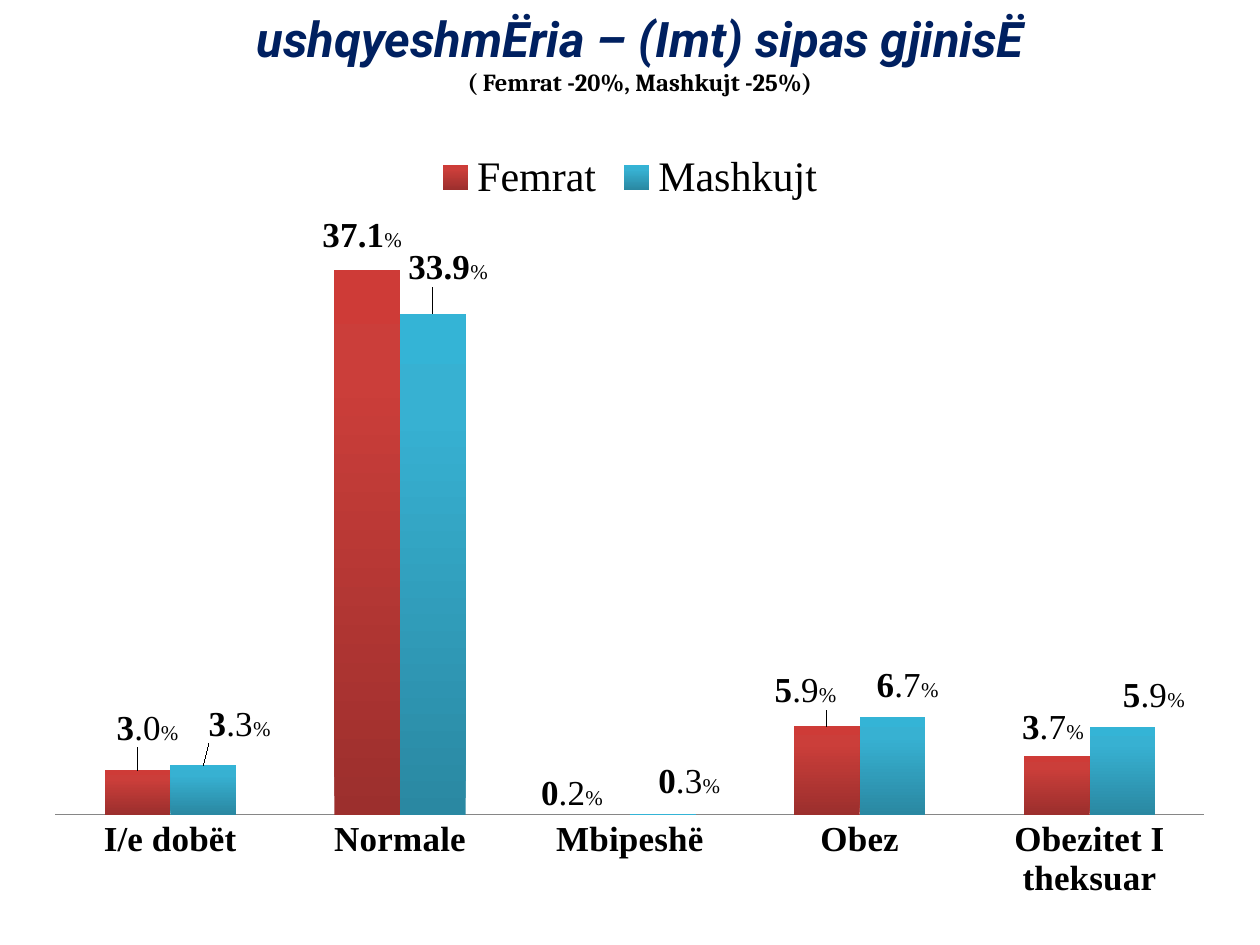
"""Builds a slide with a clustered column chart of nutrition status (BMI) by gender."""
from lxml import etree
from pptx import Presentation
from pptx import util as u
from pptx.chart import data as chart_data
from pptx.dml import color
from pptx.enum import chart as ec, text
from pptx.oxml import ns, parse_xml

TITLE = [
    ("ushqyeshmËria – (Imt) sipas gjinisË", "Roboto", 28, "002060", True),
    ("( Femrat -20%, Mashkujt -25%)", "Cambria", 14, "000000", False),
]
CATEGORIES = ["I/e dobët", "Normale", "Mbipeshë", "Obez", "Obezitet I theksuar"]
SERIES = [
    {
        "name": "Femrat",
        "values": [0.06, 0.74, 0, 0.12, 0.08],
        "format": "0%",
        "gradient": [(0, "9C2F2D"), (80, "CB3E3A"), (100, "CE3B37")],
        "labels": [("3", ".0"), ("37.1", ""), ("0", ".2"), ("5", ".9"), ("3", ".7")],
        "shifts": [(0.08, -0.14), (-0.04, -0.07), (-0.2, 0.03), (-0.17, -0.09), (-0.03, -0.03)],
    },
    {
        "name": "Mashkujt",
        "values": [0.067, 0.68, 0.001, 0.132, 0.119],
        "format": "0.00%",
        "gradient": [(0, "2A88A2"), (80, "37B1D2"), (100, "34B4D6")],
        "labels": [("3", ".3"), ("33.9", ""), ("0", ".3"), ("6", ".7"), ("5", ".9")],
        "shifts": [(0.29, -0.13), (0.12, -0.17), (0.21, -0.06), (0.12, -0.06), (0.25, -0.05)],
    },
]
CHART_WIDTH, CHART_HEIGHT = 9.5, 6.17
SERIF = "Times New Roman"


def rgb(value):
    return color.RGBColor.from_string(value)


def style(font, name, size, hue="000000", bold=False, italic=False):
    font.name, font.size, font.bold, font.italic = name, u.Pt(size), bold, italic
    font.color.rgb = rgb(hue)


def manual_layout(**settings):
    layout = etree.Element(ns.qn("c:layout"))
    manual = etree.SubElement(layout, ns.qn("c:manualLayout"))
    for tag, value in settings.items():
        etree.SubElement(manual, ns.qn("c:" + tag)).set("val", str(value))
    return layout


def fill_gradient(shape_format, stops):
    shape_format.fill.solid()
    properties = shape_format.fill._xPr
    stop_xml = "".join(
        f'<a:gs pos="{place * 1000}"><a:srgbClr val="{hue}"/></a:gs>' for place, hue in stops
    )
    gradient = parse_xml(
        f'<a:gradFill {ns.nsdecls("a")} rotWithShape="1"><a:gsLst>{stop_xml}</a:gsLst>'
        '<a:lin ang="16200000" scaled="0"/></a:gradFill>'
    )
    properties.replace(properties.find(ns.qn("a:solidFill")), gradient)


def label_point(point, label, shift):
    data_label = point.data_label
    paragraph = data_label.text_frame.paragraphs[0]
    whole, decimals = label
    for part, size, bold in [(whole, 20, True), (decimals, 20, False), ("%", 12, False)]:
        if part:
            run = paragraph.add_run()
            run.text = part
            style(run.font, SERIF, size, bold=bold)
    data_label.position = ec.XL_LABEL_POSITION.OUTSIDE_END
    dx, dy = shift
    element = data_label._dLbl
    for old in element.findall(ns.qn("c:layout")):
        element.remove(old)
    element.insert(1, manual_layout(x=dx / CHART_WIDTH, y=dy / CHART_HEIGHT))


def add_title(slide):
    title = slide.shapes.title
    title.left, title.top = u.Inches(0.58), u.Inches(0)
    title.width, title.height = u.Inches(9), u.Inches(0.83)
    frame = title.text_frame
    frame.text = "\v".join(line[0] for line in TITLE)
    frame.vertical_anchor = text.MSO_ANCHOR.MIDDLE
    frame.auto_size = text.MSO_AUTO_SIZE.NONE
    paragraph = frame.paragraphs[0]
    paragraph.alignment = text.PP_ALIGN.CENTER
    for run, (_, name, size, hue, italic) in zip(paragraph.runs, TITLE):
        style(run.font, name, size, hue, True, italic)


def add_columns(slide):
    figures = chart_data.CategoryChartData()
    figures.categories = CATEGORIES
    for entry in SERIES:
        figures.add_series(entry["name"], entry["values"], entry["format"])
    chart = slide.shapes.add_chart(
        ec.XL_CHART_TYPE.COLUMN_CLUSTERED, u.Inches(0.25), u.Inches(1.08),
        u.Inches(CHART_WIDTH), u.Inches(CHART_HEIGHT), figures,
    ).chart
    style(chart.font, "Calibri", 10)
    chart.has_title = False
    chart.has_legend = True
    chart.legend.position = ec.XL_LEGEND_POSITION.TOP
    chart.legend.include_in_layout = False
    style(chart.legend.font, SERIF, 24)

    categories, values = chart.category_axis, chart.value_axis
    categories.major_tick_mark = ec.XL_TICK_MARK.NONE
    categories.format.line.color.rgb = rgb("868686")
    style(categories.tick_labels.font, SERIF, 20, bold=True)
    values.minimum_scale, values.maximum_scale = 0, 0.8
    values.has_major_gridlines = False
    values.tick_labels.number_format = "0%"
    values.tick_labels.number_format_is_linked = False
    values.visible = False

    plot = chart.plots[0]
    plot.gap_width, plot.overlap, plot.vary_by_categories = 150, 0, False
    for series, entry in zip(plot.series, SERIES):
        series.invert_if_negative = False
        fill_gradient(series.format, entry["gradient"])
        labels = series.data_labels
        labels.show_value = True
        labels.number_format = entry["format"]
        labels.number_format_is_linked = False
        labels.position = ec.XL_LABEL_POSITION.OUTSIDE_END
        style(labels.font, SERIF, 20, bold=True)
        for index, (label, shift) in enumerate(zip(entry["labels"], entry["shifts"])):
            label_point(series.points[index], label, shift)

    plot_area = chart._chartSpace.chart.plotArea
    for old in plot_area.findall(ns.qn("c:layout")):
        plot_area.remove(old)
    plot_area.insert(0, manual_layout(
        layoutTarget="inner", xMode="edge", yMode="edge", x=0.02, y=0.115, w=0.96, h=0.758,
    ))


def main():
    deck = Presentation()
    deck.slide_width, deck.slide_height = u.Inches(10), u.Inches(7.5)
    slide = deck.slides.add_slide(deck.slide_layouts[5])
    add_title(slide)
    add_columns(slide)
    deck.save("out.pptx")


if __name__ == "__main__":
    main()
